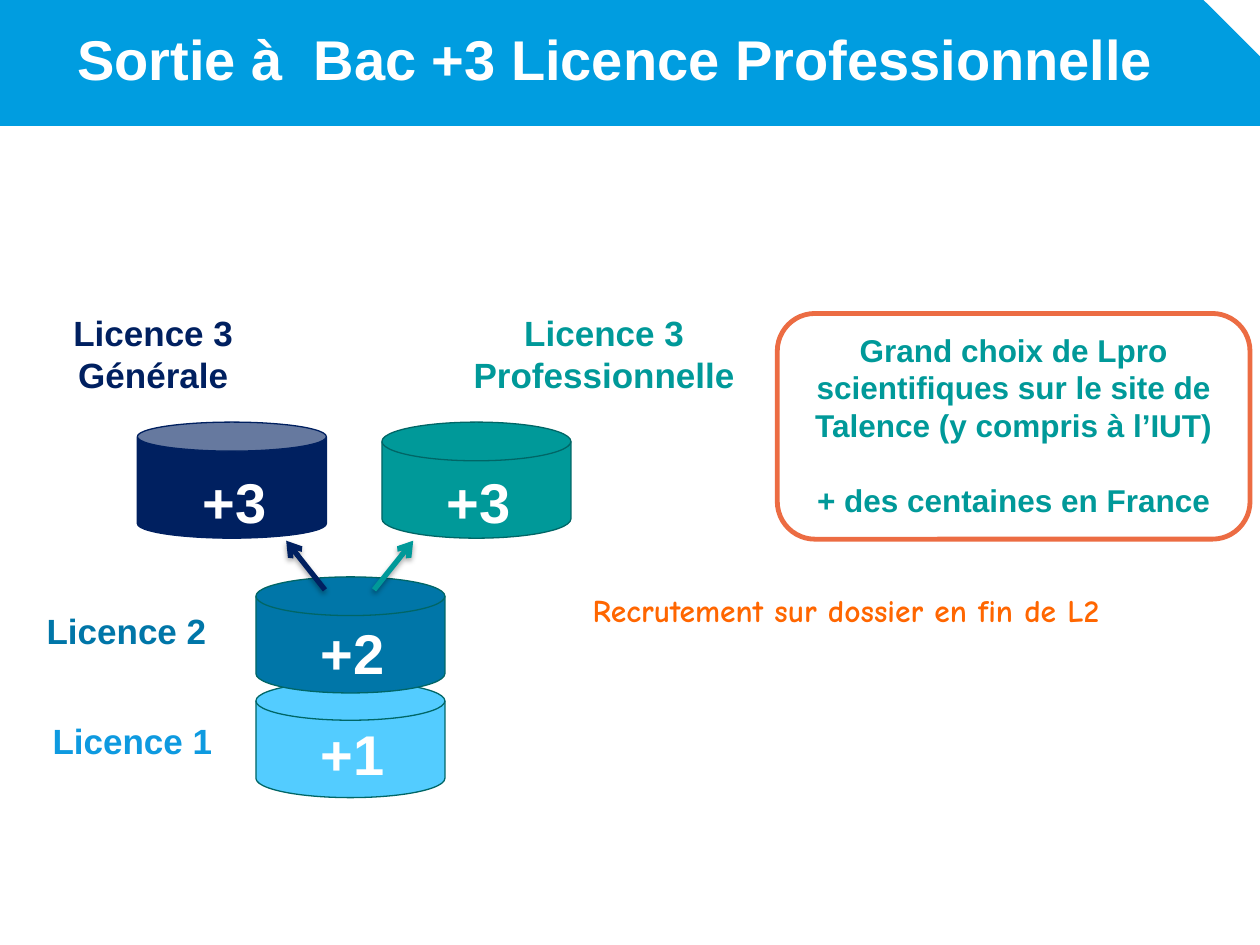
"""Build the slide on leaving with a professional bachelor's degree."""
from lxml import etree
from pptx import Presentation
from pptx.dml.color import RGBColor
from pptx.enum.shapes import MSO_CONNECTOR, MSO_SHAPE
from pptx.enum.text import MSO_ANCHOR, PP_ALIGN
from pptx.oxml import parse_xml
from pptx.oxml.ns import nsdecls, qn
from pptx.util import Cm, Pt

LINE = MSO_CONNECTOR.STRAIGHT
SNIP = MSO_SHAPE.SNIP_1_RECTANGLE
ROUND = MSO_SHAPE.ROUNDED_RECTANGLE
CAN = MSO_SHAPE.CAN
DISK = MSO_SHAPE.FLOWCHART_MAGNETIC_DISK
LEFT, MID = PP_ALIGN.LEFT, PP_ALIGN.CENTER
TOP, CENTER = MSO_ANCHOR.TOP, MSO_ANCHOR.MIDDLE

WHITE = RGBColor(0xFF, 0xFF, 0xFF)
BLUE = RGBColor(0x00, 0x9D, 0xE0)
SKY = RGBColor(0x53, 0xCC, 0xFF)
AZURE = RGBColor(0x0E, 0x9A, 0xE0)
OCEAN = RGBColor(0x00, 0x76, 0xA8)
NAVY = RGBColor(0x00, 0x20, 0x60)
TEAL = RGBColor(0x00, 0x99, 0x99)
PINE = RGBColor(0x00, 0x66, 0x66)
CORAL = RGBColor(0xEC, 0x6C, 0x43)
ORANGE = RGBColor(0xFF, 0x66, 0x00)

SHADOW = (
    f'<a:effectLst {nsdecls("a")}>'
    '<a:outerShdw blurRad="39370" dist="22860" dir="5400000" rotWithShape="0">'
    '<a:srgbClr val="000000"><a:alpha val="35000"/></a:srgbClr>'
    '</a:outerShdw></a:effectLst>'
)


def add_form(slide, kind, place, fill, line=None, width=0.75):
    """Add a filled preset shape, outlined if a line colour is given."""
    form = slide.shapes.add_shape(kind, *map(Cm, place))
    form.shadow.inherit = False
    form.fill.solid()
    form.fill.fore_color.rgb = fill
    if line is None:
        form.line.fill.background()
    else:
        form.line.color.rgb = line
        form.line.width = Pt(width)
    return form


def write(frame, lines, size, color, align=LEFT, font="Arial", gap=0):
    """Fill a text frame with bold paragraphs, a gap apart."""
    for i, text in enumerate(lines):
        para = frame.paragraphs[0] if i == 0 else frame.add_paragraph()
        para.alignment = align
        if i and gap:
            para.space_before = Pt(gap)
        run = para.add_run()
        run.text = text
        run.font.name = font
        run.font.size = Pt(size)
        run.font.bold = True
        run.font.color.rgb = color


def add_label(slide, place, lines, size, color, align=LEFT, wrap=False,
              font="Arial", anchor=TOP):
    """Add a text box."""
    frame = slide.shapes.add_textbox(*map(Cm, place)).text_frame
    frame.word_wrap = wrap
    frame.vertical_anchor = anchor
    write(frame, lines, size, color, align, font)


def add_level(slide, kind, left, top, fill, line, text, drop):
    """Add a cylinder for one year of study with its number."""
    add_form(slide, kind, (left, top, 3.81, 2.34), fill, line)
    add_label(slide, (left + 1.06, top + drop, 1.88, 1.6), [text], 32, WHITE)


def add_arrow(slide, start, end, color):
    """Add a shadowed arrow that points at its end."""
    arrow = slide.shapes.add_connector(LINE, *map(Cm, start + end))
    arrow.line.color.rgb = color
    arrow.line.width = Pt(3)
    etree.SubElement(arrow.line._get_or_add_ln(), qn("a:tailEnd"), type="arrow")
    arrow._element.spPr.append(parse_xml(SHADOW))


def add_note(slide):
    """Add the framed note on the choice of degrees."""
    note = add_form(slide, ROUND, (15.67, 6.32, 9.53, 4.55), WHITE, CORAL, 2.75)
    frame = note.text_frame
    frame.word_wrap = True
    frame.vertical_anchor = TOP
    write(frame, [
        "Grand choix de Lpro scientifiques sur le site de Talence "
        "(y compris à l’IUT)",
        "+ des centaines en France",
    ], 18, TEAL, MID, gap=21)


def main():
    """Build and save the slide."""
    deck = Presentation()
    deck.slide_width, deck.slide_height = Cm(25.4), Cm(19.05)
    slide = deck.slides.add_slide(deck.slide_layouts[6])

    banner = add_form(slide, SNIP, (0, 0, 25.43, 2.54), BLUE)
    banner.adjustments[0] = 0.46
    add_label(slide, (0, 0.36, 24.82, 1.63),
              ["Sortie à  Bac +3 Licence Professionnelle"], 32, WHITE, MID, True)

    for level in (
        (DISK, 5.16, 13.74, SKY, PINE, "+1", 0.64),
        (DISK, 5.16, 11.63, OCEAN, PINE, "+2", 0.71),
        (CAN, 2.77, 8.51, NAVY, NAVY, "+3", 0.79),
        (DISK, 7.7, 8.51, TEAL, PINE, "+3", 0.79),
    ):
        add_level(slide, *level)

    add_arrow(slide, (6.55, 11.89), (5.77, 10.9), NAVY)
    add_arrow(slide, (7.54, 11.89), (8.33, 10.9), TEAL)

    add_label(slide, (0.81, 14.38, 3.76, 1.12), ["Licence 1"], 20, AZURE)
    add_label(slide, (0.69, 12.17, 3.76, 1.12), ["Licence 2"], 20, OCEAN)
    add_label(slide, (0.41, 6.15, 5.36, 1.96), ["Licence 3 Générale"],
              20, NAVY, MID, True)
    add_label(slide, (9.27, 6.15, 5.82, 1.96),
              ["Licence 3", "Professionnelle"], 20, TEAL, MID)
    add_label(slide, (9.32, 11.3, 15.47, 1.98),
              ["Recrutement sur dossier en fin de L2"], 18, ORANGE, MID,
              font="Comic Neue", anchor=CENTER)
    add_note(slide)
    deck.save("out.pptx")


if __name__ == "__main__":
    main()
